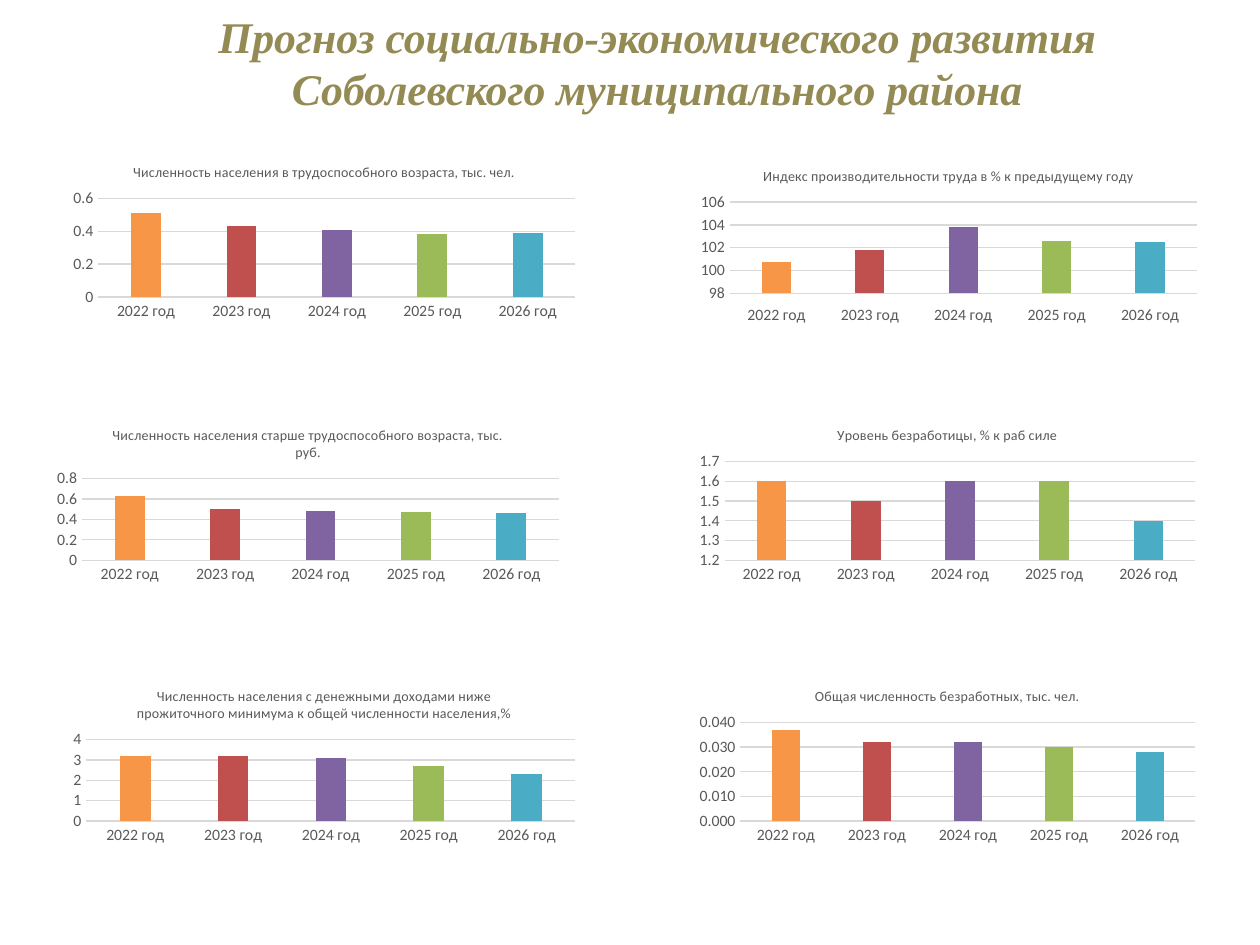
from dataclasses import dataclass

import pptx
import pptx.chart.data
import pptx.dml.color
import pptx.enum.chart
import pptx.enum.text
import pptx.util

Pt = pptx.util.Pt
RGB = pptx.dml.color.RGBColor.from_string


@dataclass(frozen=True)
class Theme:
    heading_font: str = "Times New Roman"
    chart_font: str = "Calibri"
    heading: str = "948A54"
    text: str = "595959"
    grid: str = "D9D9D9"
    bars: tuple = ("F79646", "C0504D", "8064A2", "9BBB59", "4BACC6")
    heading_size: float = 25
    title_size: float = 8
    axis_size: float = 9
    line_width: float = 0.75


@dataclass(frozen=True)
class Panel:
    title: str
    values: tuple
    left: float
    top: float
    width: float
    scale: tuple  # minimum, maximum, step
    number_format: str = "General"
    labels_low: bool = False


THEME = Theme()
YEARS = [f"{year} год" for year in range(2022, 2027)]
LEFT_W, RIGHT_W, CHART_H = 298.8, 295.2, 99.36
ROW_2, ROW_3 = 236.16, 385.2

PANELS = [
    Panel("Численность населения в трудоспособного возраста, тыс. чел.",
          (0.51, 0.43, 0.41, 0.38, 0.39), 36, 85.68, LEFT_W, (0, 0.6, 0.2)),
    Panel("Индекс производительности труда в % к предыдущему году",
          (100.7, 101.8, 103.8, 102.6, 102.5), 394.56, 87.84, RIGHT_W,
          (98, 106, 2), labels_low=True),
    Panel("Численность населения старше трудоспособного возраста, тыс. руб.",
          (0.63, 0.5, 0.48, 0.47, 0.46), 26.64, ROW_2, LEFT_W, (0, 0.8, 0.2)),
    Panel("Уровень безработицы, % к раб силе",
          (1.6, 1.5, 1.6, 1.6, 1.4), 393.84, ROW_2, RIGHT_W, (1.2, 1.7, 0.1)),
    Panel("Численность населения с денежными доходами ниже прожиточного "
          "минимума к общей численности населения,%",
          (3.2, 3.2, 3.1, 2.7, 2.3), 36, ROW_3, LEFT_W, (0, 4, 1)),
    Panel("Общая численность безработных, тыс. чел.",
          (0.037, 0.032, 0.032, 0.03, 0.028), 393.84, ROW_3, RIGHT_W,
          (0, 0.04, 0.01), "0.000"),
]


def set_font(font, color: str, **values) -> None:
    for name, value in values.items():
        setattr(font, name, value)
    font.color.rgb = RGB(color)


def set_line(line) -> None:
    line.color.rgb = RGB(THEME.grid)
    line.width = Pt(THEME.line_width)


def add_heading(s, lines: list[str]) -> None:
    box = s.shapes.add_textbox(Pt(-36.72), Pt(12.96), Pt(768.24), Pt(44.64))
    tf = box.text_frame
    tf.word_wrap = True
    tf.vertical_anchor = pptx.enum.text.MSO_ANCHOR.MIDDLE
    for i, line in enumerate(lines):
        p = tf.add_paragraph() if i else tf.paragraphs[0]
        p.alignment = pptx.enum.text.PP_ALIGN.CENTER
        pPr = p._p.get_or_add_pPr()
        pPr.set("marL", str(Pt(56.16)))
        pPr.set("indent", "0")
        r = p.add_run()
        r.text = line
        set_font(r.font, THEME.heading, name=THEME.heading_font,
                 size=Pt(THEME.heading_size), bold=True, italic=True)


def add_panel(s, panel: Panel) -> None:
    data = pptx.chart.data.CategoryChartData()
    data.categories = YEARS
    data.add_series(panel.title, panel.values)
    chart = s.shapes.add_chart(
        pptx.enum.chart.XL_CHART_TYPE.COLUMN_CLUSTERED, Pt(panel.left),
        Pt(panel.top), Pt(panel.width), Pt(CHART_H), data).chart
    chart.has_legend = False
    set_font(chart.font, THEME.text, name=THEME.chart_font,
             size=Pt(THEME.axis_size))

    # Chart title
    chart.has_title = True
    chart.chart_title.include_in_layout = False
    p = chart.chart_title.text_frame.paragraphs[0]
    r = p.add_run()
    r.text = panel.title
    set_font(r.font, THEME.text, name=THEME.chart_font,
             size=Pt(THEME.title_size), bold=False)

    # Axes and gridlines
    cat, val = chart.category_axis, chart.value_axis
    for axis in (cat, val):
        axis.major_tick_mark = pptx.enum.chart.XL_TICK_MARK.NONE
        axis.minor_tick_mark = pptx.enum.chart.XL_TICK_MARK.NONE
        set_font(axis.tick_labels.font, THEME.text, name=THEME.chart_font,
                 size=Pt(THEME.axis_size))
    set_line(cat.format.line)
    if panel.labels_low:
        cat.tick_label_position = pptx.enum.chart.XL_TICK_LABEL_POSITION.LOW
    val.format.line.fill.background()
    set_line(val.major_gridlines.format.line)
    val.minimum_scale, val.maximum_scale, val.major_unit = panel.scale
    val.tick_labels.number_format = panel.number_format
    val.tick_labels.number_format_is_linked = False

    # One colour per year
    plot = chart.plots[0]
    plot.gap_width = 219
    plot.vary_by_categories = False
    for i, color in enumerate(THEME.bars):
        fill = plot.series[0].points[i].format.fill
        fill.solid()
        fill.fore_color.rgb = RGB(color)


def main() -> None:
    prs = pptx.Presentation()
    prs.slide_width, prs.slide_height = Pt(720), Pt(540)
    s = prs.slides.add_slide(prs.slide_layouts[6])
    add_heading(s, ["Прогноз социально-экономического развития",
                    "Соболевского муниципального района"])
    for panel in PANELS:
        add_panel(s, panel)
    prs.save("out.pptx")


if __name__ == "__main__":
    main()
